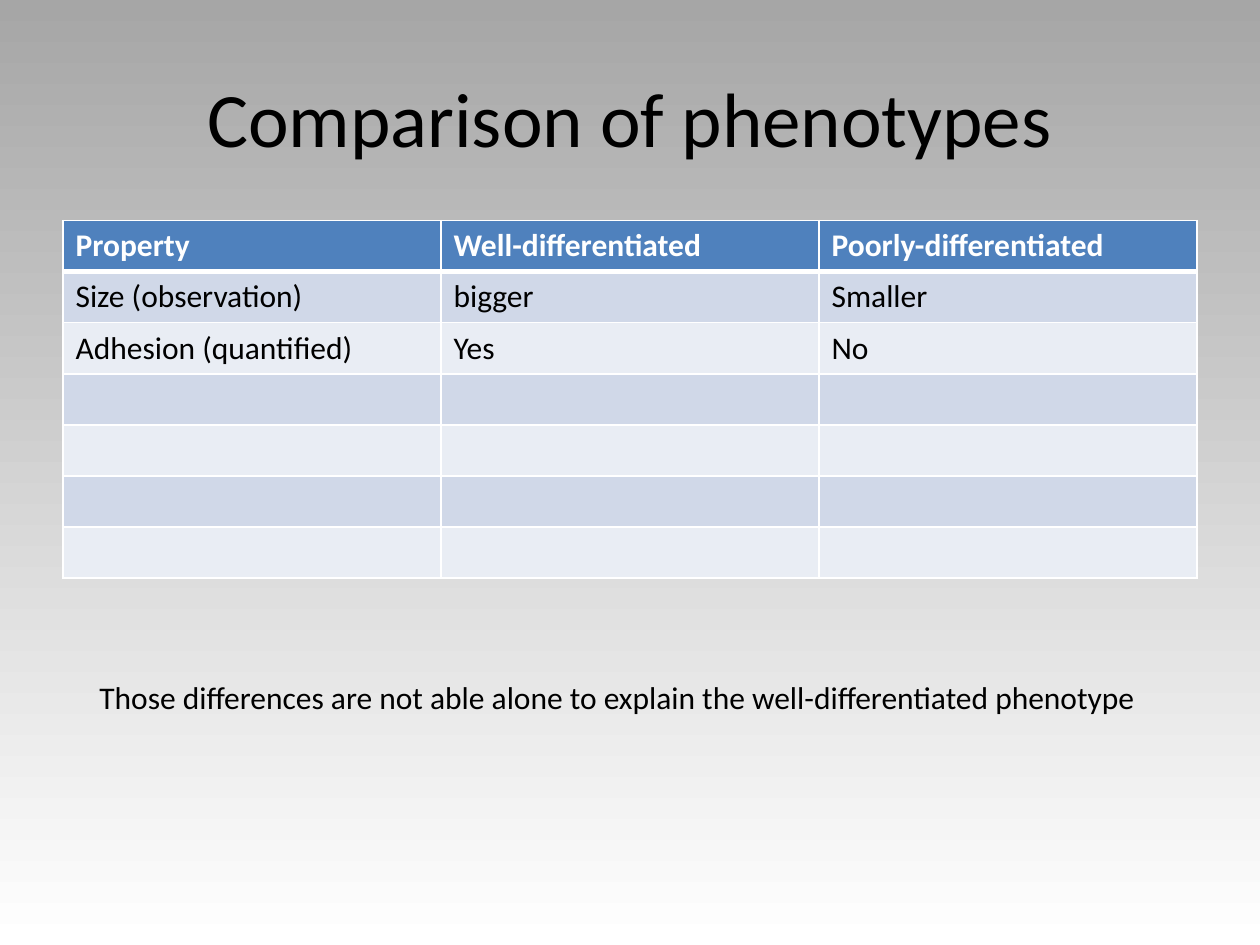
from dataclasses import dataclass

from lxml.etree import SubElement
from pptx import Presentation
from pptx.dml.color import RGBColor
from pptx.enum.text import MSO_ANCHOR as Anchor, PP_ALIGN as Align
from pptx.oxml.ns import qn
from pptx.util import Inches, Pt

SLIDE_WIDTH, SLIDE_HEIGHT = Inches(10), Inches(7.5)
GRID_COLUMNS, GRID_ROWS = 20, 30
FONT = "Calibri"
BLACK, WHITE = "000000", "FFFFFF"
HEADER_FILL, BAND_FILLS = "4F81BD", ("D0D8E8", "E9EDF4")
THIN, THICK = 1, 3
TABLE_ROWS = 7
TABLE_TEXT = (
    ("Property", "Well-differentiated", "Poorly-differentiated"),
    ("Size (observation)", "bigger", "Smaller"),
    ("Adhesion (quantified)", "Yes", "No"),
)


@dataclass(frozen=True)
class Area:
    column: float
    row: float
    columns: float
    rows: float

    def box(self) -> tuple[int, int, int, int]:
        unit_x, unit_y = SLIDE_WIDTH / GRID_COLUMNS, SLIDE_HEIGHT / GRID_ROWS
        return (round(self.column * unit_x), round(self.row * unit_y),
                round(self.columns * unit_x), round(self.rows * unit_y))


@dataclass(frozen=True)
class RowStyle:
    fill: str
    color: str
    bold: bool
    top: int
    bottom: int


TITLE_AREA = Area(1, 1.2, 18, 5)
TABLE_AREA = Area(1, 7, 18, 11.36)
NOTE_AREA = Area(1.38, 21.32, 17.02, 1.6)


def color_of(value: str) -> RGBColor:
    return RGBColor.from_string(value)


def write_text(text_frame, text: str, size: int, color: str = BLACK,
               bold: bool = False) -> None:
    text_frame.text = text
    font = text_frame.paragraphs[0].font
    font.name, font.size, font.bold = FONT, Pt(size), bold
    font.color.rgb = color_of(color)


def paint_background(slide) -> None:
    fill = slide.background.fill
    fill.gradient()
    fill.gradient_angle = 270
    for stop, color in zip(fill.gradient_stops, ("A6A6A6", WHITE)):
        stop.color.rgb = color_of(color)


def add_title(slide, text: str) -> None:
    title = slide.shapes.title
    title.left, title.top, title.width, title.height = TITLE_AREA.box()
    write_text(title.text_frame, text, 44)
    title.text_frame.vertical_anchor = Anchor.MIDDLE
    title.text_frame.paragraphs[0].alignment = Align.CENTER


def row_style(index: int) -> RowStyle:
    if index == 0:
        return RowStyle(HEADER_FILL, WHITE, True, THIN, THICK)
    top = THICK if index == 1 else THIN
    return RowStyle(BAND_FILLS[(index - 1) % 2], BLACK, False, top, THIN)


def add_borders(cell, style: RowStyle) -> None:
    properties = cell._tc.get_or_add_tcPr()
    widths = {"a:lnL": THIN, "a:lnR": THIN, "a:lnT": style.top, "a:lnB": style.bottom}
    for tag, width in widths.items():
        line = SubElement(properties, qn(tag), w=str(Pt(width)))
        fill = SubElement(line, qn("a:solidFill"))
        SubElement(fill, qn("a:srgbClr"), val=WHITE)


def format_cell(cell, text: str, style: RowStyle) -> None:
    write_text(cell.text_frame, text, 18, style.color, style.bold)
    add_borders(cell, style)
    cell.fill.solid()
    cell.fill.fore_color.rgb = color_of(style.fill)


def add_comparison_table(slide) -> None:
    column_count = len(TABLE_TEXT[0])
    table = slide.shapes.add_table(TABLE_ROWS, column_count, *TABLE_AREA.box()).table
    for row_index in range(TABLE_ROWS):
        filled = row_index < len(TABLE_TEXT)
        texts = TABLE_TEXT[row_index] if filled else ("",) * column_count
        for column_index, text in enumerate(texts):
            format_cell(table.cell(row_index, column_index), text, row_style(row_index))


def add_note(slide, text: str) -> None:
    text_frame = slide.shapes.add_textbox(*NOTE_AREA.box()).text_frame
    text_frame.word_wrap = True
    write_text(text_frame, text, 18)


def main() -> None:
    presentation = Presentation()
    presentation.slide_width, presentation.slide_height = SLIDE_WIDTH, SLIDE_HEIGHT
    slide = presentation.slides.add_slide(presentation.slide_layouts[5])
    paint_background(slide)
    add_title(slide, "Comparison of phenotypes")
    add_comparison_table(slide)
    add_note(slide, "Those differences are not able alone to explain "
                    "the well-differentiated phenotype")
    presentation.save("out.pptx")


if __name__ == "__main__":
    main()
